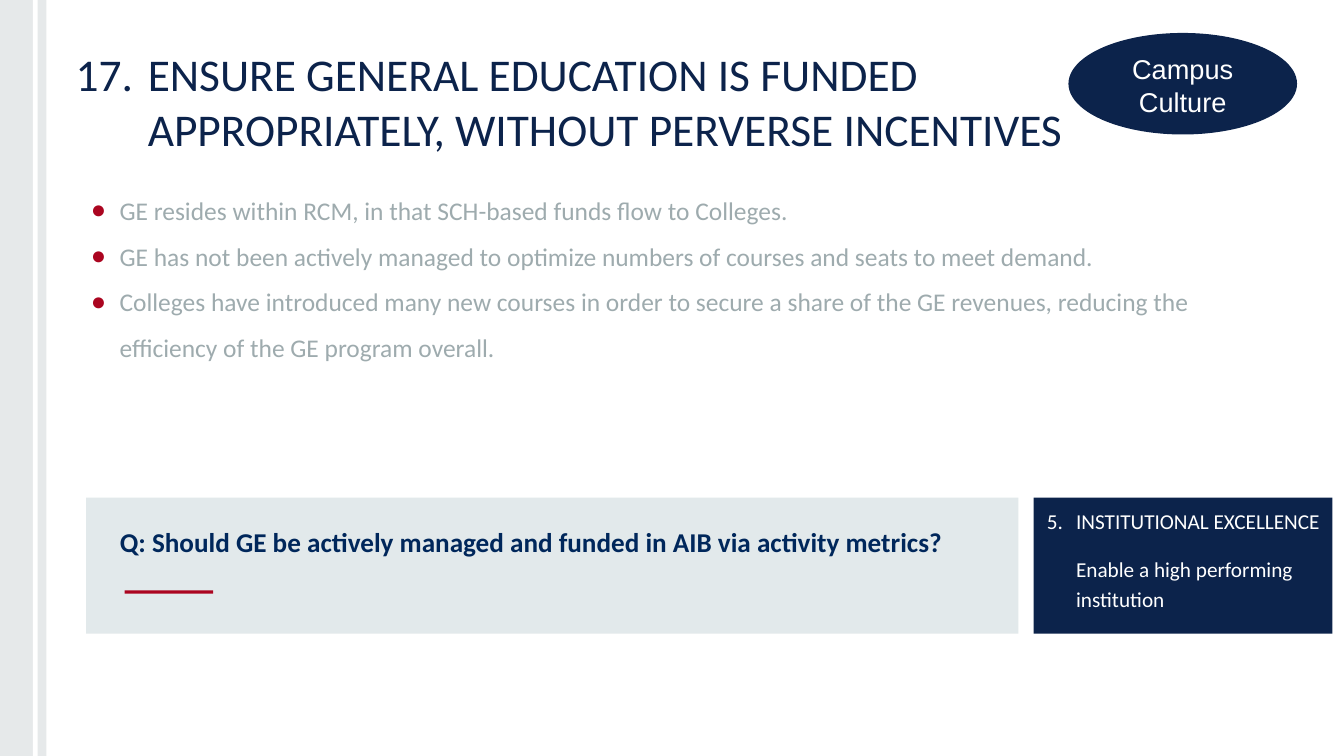
from dataclasses import dataclass

from lxml.etree import SubElement
from pptx import Presentation
from pptx.dml.color import RGBColor
from pptx.enum.shapes import MSO_SHAPE
from pptx.enum.text import MSO_ANCHOR, MSO_AUTO_SIZE, PP_ALIGN
from pptx.oxml.ns import qn
from pptx.util import Cm, Pt


@dataclass(frozen=True)
class Theme:
    navy: str = "0C234B"
    question_blue: str = "00275B"
    red: str = "AB0520"
    grey: str = "9EABAE"
    pale: str = "E2E9EB"
    white: str = "FFFFFF"
    text_font: str = "Calibri"
    badge_font: str = "Arial"
    title_size: float = 53.5
    body_size: float = 30
    callout_size: float = 32
    goal_size: float = 25


@dataclass(frozen=True)
class Box:
    """A region in centimetres."""
    left: float
    top: float
    width: float
    height: float

    def inner(self, left, top, width, height):
        return Box(self.left + left, self.top + top, width, height)

    def lengths(self):
        return [Cm(n) for n in (self.left, self.top, self.width, self.height)]


THEME = Theme()
SLIDE = Box(0, 0, 55.85, 31.42)
BAND_TOP, BAND_HEIGHT = 20.68, 5.66
INSET = 0.25


def apply(target, values):
    for name, value in values.items():
        setattr(target, name, value)


def add_block(slide, box, color, preset=MSO_SHAPE.RECTANGLE):
    block = slide.shapes.add_shape(preset, *box.lengths())
    block.shadow.inherit = False
    block.fill.solid()
    block.fill.fore_color.rgb = RGBColor.from_string(color)
    block.line.fill.background()
    return block


def place(placeholder, box):
    apply(placeholder, dict(zip(("left", "top", "width", "height"), box.lengths())))


def set_frame(frame, left=INSET, top=INSET, right=INSET, bottom=INSET, anchor=MSO_ANCHOR.TOP):
    apply(frame, {
        "word_wrap": True, "auto_size": MSO_AUTO_SIZE.NONE, "vertical_anchor": anchor,
        "margin_left": Cm(left), "margin_top": Cm(top),
        "margin_right": Cm(right), "margin_bottom": Cm(bottom),
    })


def write(frame, lines, size, color, font=THEME.text_font, bold=False,
          align=PP_ALIGN.LEFT, spacing=1.0, gap=0, indent=0, hanging=0, bullet=None):
    for index, line in enumerate(lines):
        paragraph = frame.paragraphs[0] if index == 0 else frame.add_paragraph()
        paragraph.text = line
        properties = paragraph._p.get_or_add_pPr()
        properties.set("marL", str(Cm(indent)))
        # A line without a number or bullet starts at the indent itself
        hangs = bullet or "\t" in line
        properties.set("indent", str(-Cm(hanging) if hangs else 0))
        if bullet:
            bullet_color = SubElement(properties, qn("a:buClr"))
            SubElement(bullet_color, qn("a:srgbClr"), val=THEME.red)
            SubElement(properties, qn("a:buFont"), typeface=THEME.badge_font)
            SubElement(properties, qn("a:buChar"), char=bullet)
        apply(paragraph, {
            "alignment": align, "line_spacing": spacing,
            "space_before": Pt(gap if index else 0), "space_after": Pt(0),
        })
        for run in paragraph.runs:
            apply(run.font, {"name": font, "size": Pt(size), "bold": bold})
            run.font.color.rgb = RGBColor.from_string(color)


# Stripes along the left edge
def add_side_stripes(slide, box):
    wide = add_block(slide, box, THEME.grey)
    tint = wide._element.spPr.find(qn("a:solidFill")).find(qn("a:srgbClr"))
    SubElement(tint, qn("a:alpha"), val="25000")
    add_block(slide, box.inner(1.37, 0, 0.2, box.height), THEME.white)


# Numbered heading
def fill_title(slide, box):
    title = slide.shapes.title
    place(title, box)
    set_frame(title.text_frame)
    write(title.text_frame,
          ["17.\tENSURE GENERAL EDUCATION IS FUNDED APPROPRIATELY, WITHOUT PERVERSE INCENTIVES"],
          THEME.title_size, THEME.navy, indent=3.05, hanging=3)


# Findings
def fill_findings(slide, box):
    findings = slide.placeholders[1]
    place(findings, box)
    set_frame(findings.text_frame)
    write(findings.text_frame, [
        "GE resides within RCM, in that SCH-based funds flow to Colleges.",
        "GE has not been actively managed to optimize numbers of courses and seats to meet demand.",
        "Colleges have introduced many new courses in order to secure a share of the GE revenues, "
        "reducing the efficiency of the GE program overall.",
    ], THEME.body_size, THEME.grey, spacing=1.5, indent=1.27, hanging=1.19, bullet="●")


# Question panel with its red rule
def add_question(slide, box):
    panel = add_block(slide, box, THEME.pale)
    set_frame(panel.text_frame, left=1.4, top=1.16)
    write(panel.text_frame,
          ["Q: Should GE be actively managed and funded in AIB via activity metrics?"],
          THEME.callout_size, THEME.question_blue, bold=True)
    add_block(slide, box.inner(1.6, 3.86, 3.68, 0.13), THEME.red)


# Theme badge
def add_badge(slide, box):
    badge = add_block(slide, box, THEME.navy, MSO_SHAPE.OVAL)
    set_frame(badge.text_frame, 0, 0.1, 0, 0, MSO_ANCHOR.MIDDLE)
    write(badge.text_frame, ["Campus\vCulture"], THEME.callout_size, THEME.white,
          font=THEME.badge_font, align=PP_ALIGN.CENTER)


# Strategic goal
def add_goal(slide, box):
    goal = add_block(slide, box, THEME.navy)
    set_frame(goal.text_frame, left=0.5, bottom=0.13)
    write(goal.text_frame,
          ["5.\tINSTITUTIONAL EXCELLENCE", "Enable a high performing institution"],
          THEME.goal_size, THEME.white, spacing=1.2, gap=20, indent=1.27, hanging=1.22)


def main():
    deck = Presentation()
    apply(deck, {"slide_width": Cm(SLIDE.width), "slide_height": Cm(SLIDE.height)})
    slide = deck.slides.add_slide(deck.slide_layouts[1])
    add_side_stripes(slide, Box(0, 0, 1.93, SLIDE.height))
    fill_title(slide, Box(2.84, 1.68, 43.15, 2.51))
    fill_findings(slide, Box(3.45, 7.21, 49.56, 12.8))
    add_question(slide, Box(3.58, BAND_TOP, 38.74, BAND_HEIGHT))
    add_badge(slide, Box(44.4, 1.37, 9.5, 4.22))
    add_goal(slide, Box(42.95, BAND_TOP, 12.42, BAND_HEIGHT))
    deck.save("out.pptx")


if __name__ == "__main__":
    main()
